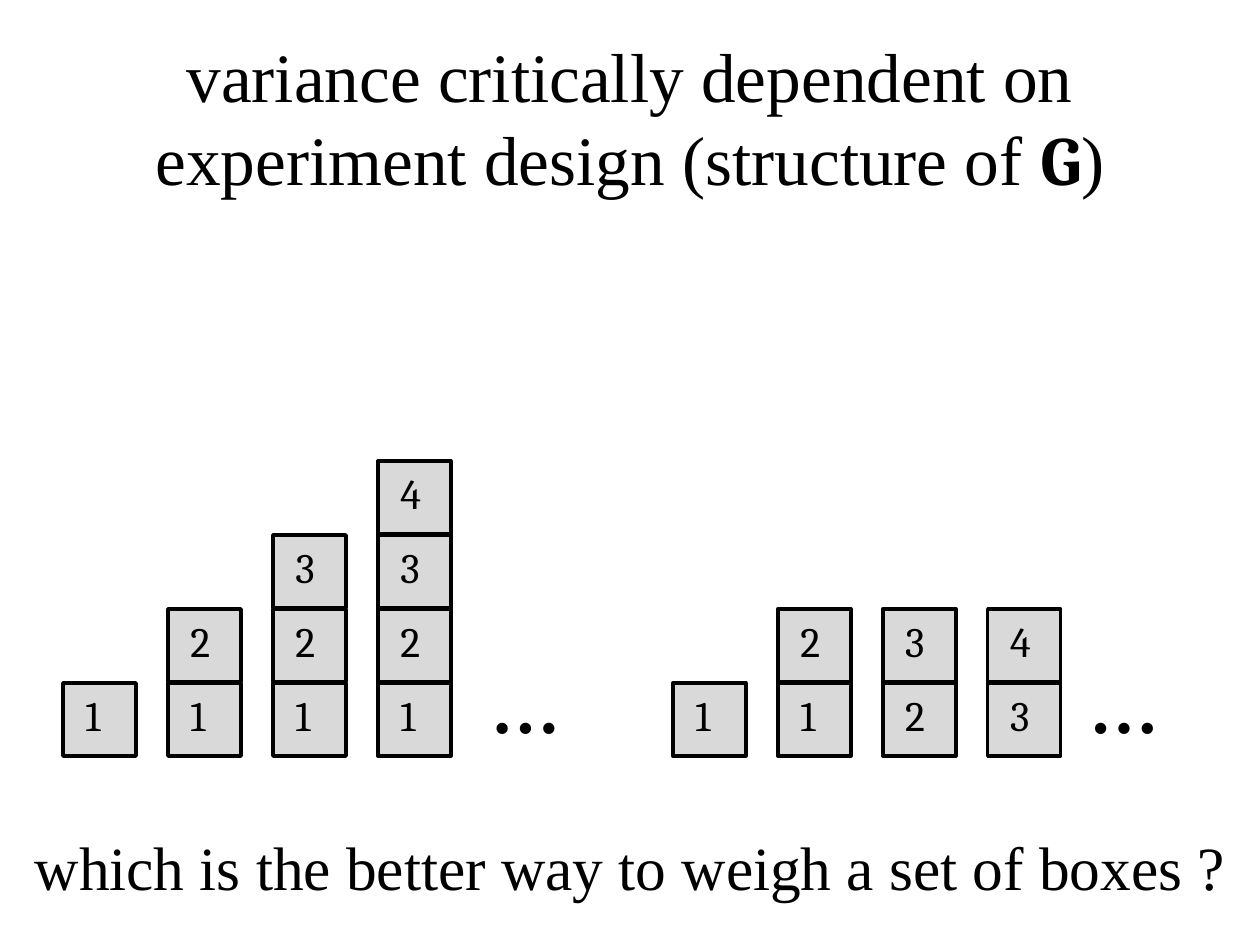
from pptx import Presentation
from pptx.dml.color import RGBColor
from pptx.enum.shapes import MSO_SHAPE
from pptx.enum.text import MSO_ANCHOR, MSO_AUTO_SIZE, PP_ALIGN
from pptx.util import Inches, Pt

BLACK = RGBColor(0x00, 0x00, 0x00)
GREY = RGBColor(0xD9, 0xD9, 0xD9)
SERIF = "Times New Roman"
NUMERAL = "Cambria"

BOX = 0.58
ROW_STEP = 0.587
COLUMN_STEP = 0.833
BOTTOM_ROW = 5.42


def style(run, size, font=SERIF, bold=False):
    run.font.size = Pt(size)
    run.font.name = font
    run.font.bold = bold
    run.font.color.rgb = BLACK


def add_centred_text(text, left, top, width, height, size, bold=False, spacing=None):
    frame = slide.shapes.add_textbox(
        Inches(left), Inches(top), Inches(width), Inches(height)).text_frame
    frame.word_wrap = True
    frame.vertical_anchor = MSO_ANCHOR.MIDDLE
    paragraph = frame.paragraphs[0]
    paragraph.text = text
    paragraph.alignment = PP_ALIGN.CENTER
    paragraph.line_spacing = spacing
    style(paragraph.runs[0], size, bold=bold)


prs = Presentation()
prs.slide_width = Inches(10)
prs.slide_height = Inches(7.5)
slide = prs.slides.add_slide(prs.slide_layouts[5])

# Title
title = slide.shapes.title
title.left, title.top = Inches(0.5), Inches(0.3)
title.width, title.height = Inches(9), Inches(1.25)
title.text_frame.vertical_anchor = MSO_ANCHOR.MIDDLE
heading = title.text_frame.paragraphs[0]
heading.alignment = PP_ALIGN.CENTER
for text, font, bold in [
    ("variance critically dependent on experiment design (structure of ", SERIF, False),
    ("G", NUMERAL, True),
    (")", SERIF, False),
]:
    run = heading.add_run()
    run.text = text
    style(run, 39.6, font, bold)

# Two weighing schemes: each stack lists its box numbers from the bottom up
schemes = [
    (0.5, [[1], [1, 2], [1, 2, 3], [1, 2, 3, 4]]),
    (5.34, [[1], [1, 2], [2, 3], [3, 4]]),
]
for scheme_left, stacks in schemes:
    for column, stack in enumerate(stacks):
        left = scheme_left + column * COLUMN_STEP
        for row, number in enumerate(stack):
            top = BOTTOM_ROW - row * ROW_STEP
            group = slide.shapes.add_group_shape()
            box = group.shapes.add_shape(
                MSO_SHAPE.RECTANGLE, Inches(left), Inches(top), Inches(BOX), Inches(BOX))
            box.shadow.inherit = False
            box.fill.solid()
            box.fill.fore_color.rgb = GREY
            box.line.color.rgb = BLACK
            box.line.width = Pt(2)

            label = group.shapes.add_textbox(
                Inches(left + 0.08), Inches(top), Inches(0.42), Inches(0.5)).text_frame
            label.word_wrap = True
            label.auto_size = MSO_AUTO_SIZE.SHAPE_TO_FIT_TEXT
            label.text = str(number)
            style(label.paragraphs[0].runs[0], 24, NUMERAL)

for ellipsis_left in (3.67, 8.42):
    add_centred_text("…", ellipsis_left, 5.33, 1, 0.67, 39.6, bold=True, spacing=0.8)

# Closing question
add_centred_text("which is the better way to weigh a set of boxes ?",
                 0, 6.25, 10, 1.25, 35.1)

prs.save("out.pptx")
